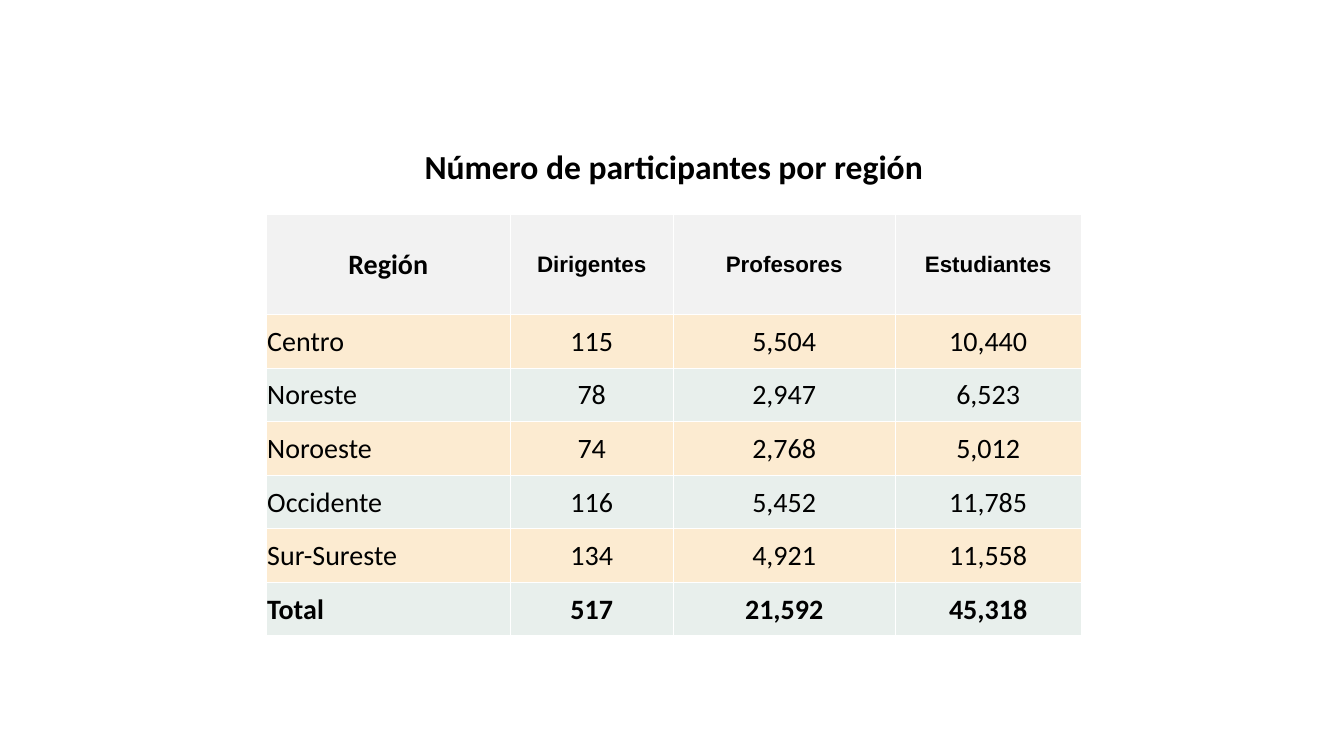
from lxml import etree
from pptx import Presentation
from pptx.dml.color import RGBColor
from pptx.enum import text
from pptx.oxml import ns
from pptx.util import Pt

HUES = {"ink": "000000", "line": "FFFFFF", "head": "F2F2F2",
        "warm": "FCEBD1", "cool": "E8EFEC"}
TITLE = "Número de participantes por región"
HEADS = ["Región", "Dirigentes", "Profesores", "Estudiantes"]
DATA = [
    ["Centro", "115", "5,504", "10,440"],
    ["Noreste", "78", "2,947", "6,523"],
    ["Noroeste", "74", "2,768", "5,012"],
    ["Occidente", "116", "5,452", "11,785"],
    ["Sur-Sureste", "134", "4,921", "11,558"],
    ["Total", "517", "21,592", "45,318"],
]
COLS = [174.2, 116.6, 158.4, 133]
ROWS = [67.7, 71.3] + [38.27] * len(DATA)


class Deck:
    """Hold the style and the current slide, and draw table parts on it."""

    def __init__(self, show):
        self.font, self.size = "Calibri", 20
        self.slide = show.slides.add_slide(show.slide_layouts[6])

    def grid(self, left, top, cols, rows):
        frame = self.slide.shapes.add_table(
            len(rows), len(cols), Pt(left), Pt(top), Pt(sum(cols)), Pt(sum(rows)))
        grid = frame.table
        for col, width in zip(grid.columns, cols):
            col.width = Pt(width)
        for row, height in zip(grid.rows, rows):
            row.height = Pt(height)
        for cell in grid.iter_cells():
            cell.fill.background()
            self.edge(cell)
        return grid

    def edge(self, cell):
        props = cell._tc.get_or_add_tcPr()
        for spot, side in enumerate(["lnL", "lnR", "lnT", "lnB"]):
            line = etree.Element(ns.qn(f"a:{side}"), w=str(Pt(1)))
            fill = etree.SubElement(line, ns.qn("a:solidFill"))
            etree.SubElement(fill, ns.qn("a:srgbClr"), val=HUES["line"])
            props.insert(spot, line)

    def cell(self, cell, words, hue=None, size=None, font=None, bold=False,
             align=text.PP_ALIGN.CENTER):
        if hue:
            cell.fill.solid()
            cell.fill.fore_color.rgb = RGBColor.from_string(HUES[hue])
        cell.vertical_anchor = text.MSO_ANCHOR.MIDDLE
        cell.margin_left = cell.margin_right = cell.margin_top = Pt(0.7)
        cell.margin_bottom = Pt(0)
        para = cell.text_frame.paragraphs[0]
        para.alignment = align
        run = para.add_run()
        run.text = words
        run.font.name = font or self.font
        run.font.size = Pt(size or self.size)
        run.font.bold = bold
        run.font.color.rgb = RGBColor.from_string(HUES["ink"])


def main():
    show = Presentation()
    show.slide_width, show.slide_height = Pt(960), Pt(540)
    deck = Deck(show)
    grid = deck.grid(190.2, 85.7, COLS, ROWS)
    grid.cell(0, 0).merge(grid.cell(0, len(COLS) - 1))
    deck.cell(grid.cell(0, 0), TITLE, size=24, bold=True)
    for c, head in enumerate(HEADS):
        look = {"size": 16, "font": "Arial"} if c else {}
        deck.cell(grid.cell(1, c), head, "head", bold=True, **look)
    for r, row in enumerate(DATA):
        for c, words in enumerate(row):
            deck.cell(grid.cell(r + 2, c), words, "cool" if r % 2 else "warm",
                      bold=row[0] == "Total",
                      align=text.PP_ALIGN.CENTER if c else text.PP_ALIGN.LEFT)
    show.save("out.pptx")


if __name__ == "__main__":
    main()
